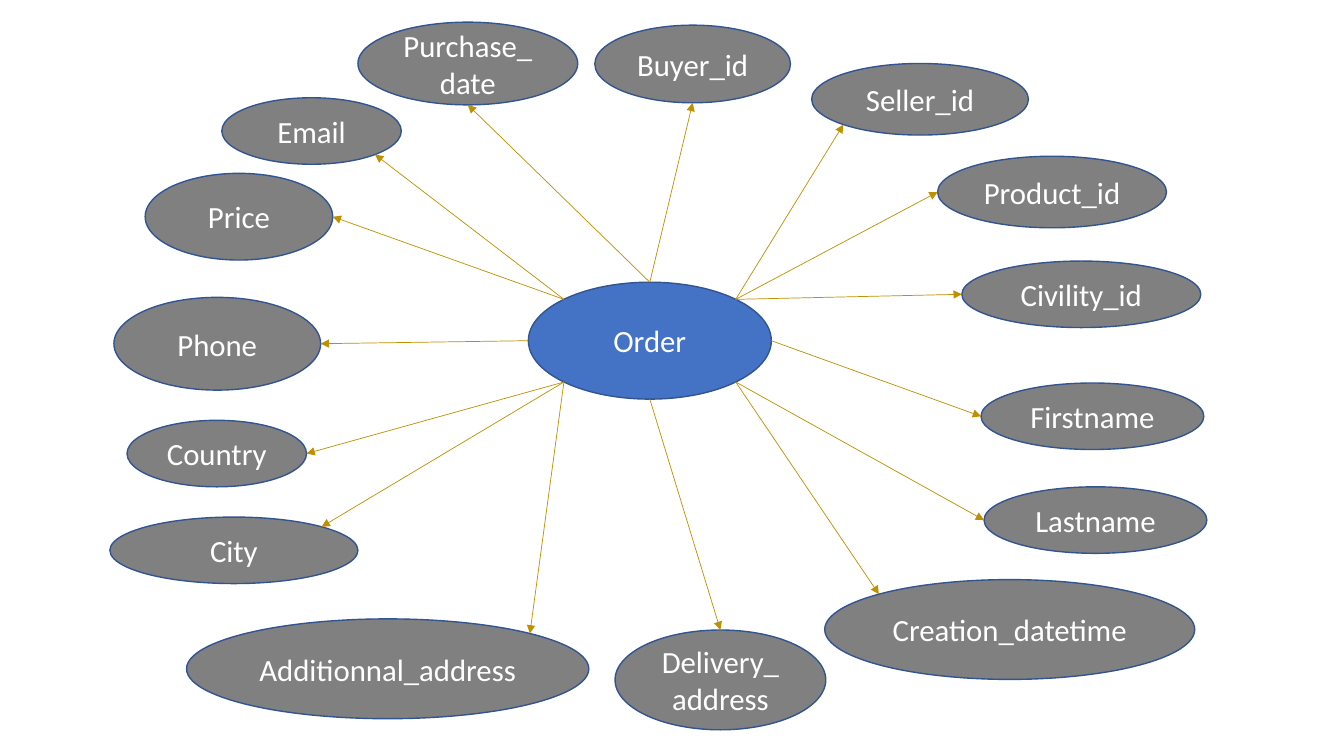
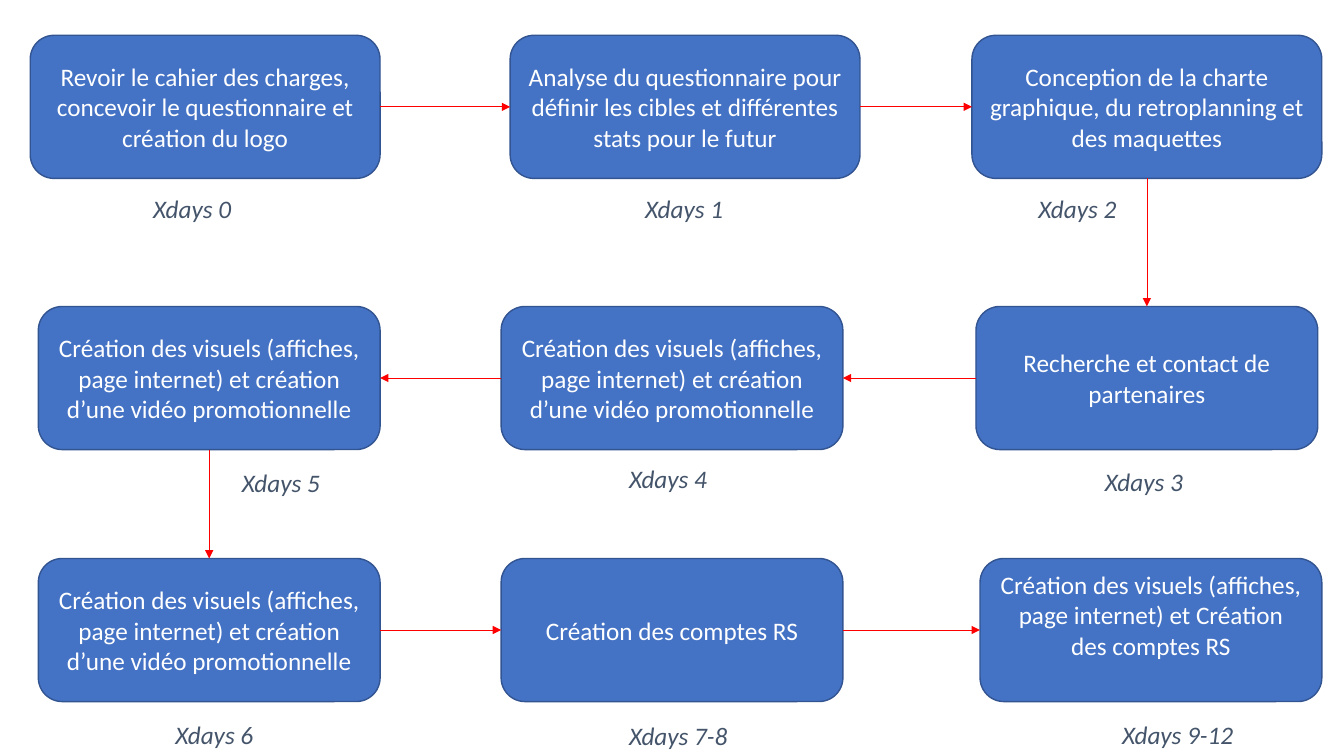
from math import sqrt

from pptx import Presentation
from pptx import util as u
from pptx.dml.color import RGBColor
from pptx.enum import shapes, text
from pptx.oxml import ns
from pptx.oxml.xmlchemy import OxmlElement

# Shared look; 100 px make one inch
PX = 9144
BLUE, GREY, OUTLINE, WHITE = "4472C4", "808080", "325491", "FFFFFF"
GOLD, RED = "BF9000", "FF0000"
NODE_FONT = {"name": "Calibri", "size": u.Pt(22), "color": WHITE}
STEP_FONT = {"name": "Calibri", "size": u.Pt(18), "color": WHITE}
LABEL_FONT = {"name": "Calibri", "size": u.Pt(18), "color": "44546A", "italic": True}

# Slide 1: centre, then attributes: name, box, side left on the centre, side reached
ORDER = ("Order", (524, 280, 241, 116))
ATTRIBUTES = [
    ("Purchase_date", (355, 22, 218, 82), "N", "S"),
    ("Buyer_id", (590, 25, 194, 77), "N", "S"),
    ("Seller_id", (805, 63, 215, 71), "NE", "SW"),
    ("Product_id", (930, 155, 227, 71), "NE", "W"),
    ("Civility_id", (954, 259, 237, 66), "NE", "W"),
    ("Firstname", (973, 380, 221, 66), "E", "W"),
    ("Lastname", (976, 483, 221, 66), "SE", "W"),
    ("Creation_datetime", (818, 575, 367, 99), "SE", "NW"),
    ("Delivery_address", (610, 625, 209, 99), "S", "N"),
    ("Additionnal_address", (185, 614, 399, 99), "SW", "NE"),
    ("City", (109, 513, 246, 66), "SW", "NE"),
    ("Country", (126, 417, 178, 66), "SW", "E"),
    ("Phone", (113, 295, 205, 92), "W", "E"),
    ("Price", (144, 172, 186, 86), "NW", "E"),
    ("Email", (220, 97, 178, 66), "NW", "SE"),
]
OUTLINES = {"Price": "2F5597"}

# Slide 2: rows of (top, step width, steps in reading order of the flow)
# Each step: left, text, label, label left, label top
STEP_HEIGHT = 142
LABEL_SIZE = (132, 40)
VISUALS = ("Création des visuels (affiches, page internet) et création "
           "d’une vidéo promotionnelle")
ROWS = [
    (35, 347, [
        (30, "Revoir le cahier des charges, concevoir le questionnaire et création du logo",
         "Xdays 0", 142, 187),
        (506, "Analyse du questionnaire pour définir les cibles et différentes "
              "stats pour le futur", "Xdays 1", 630, 187),
        (964, "Conception de la charte graphique, du retroplanning et des maquettes",
         "Xdays 2", 1020, 187)]),
    (304, 339, [
        (968, "Recherche et contact de partenaires", "Xdays 3", 1086, 458),
        (497, VISUALS, "Xdays 4", 614, 455),
        (38, VISUALS, "Xdays 5", 230, 459)]),
    (554, 339, [
        (38, VISUALS, "Xdays 6", 164, 709),
        (497, "Création des comptes RS", "Xdays 7-8", 614, 710),
        (972, "Création des visuels (affiches, page internet) et Création\vdes comptes RS",
         "Xdays 9-12", 1103, 709)]),
]
LAST_STEP_BOTTOM_MARGIN = 35
TOP, LEFT, BOTTOM, RIGHT = range(4)


def rgb(value):
    return RGBColor.from_string(value)


def emu(lengths):
    return [u.Emu(round(v * PX)) for v in lengths]


def write(shape, words, style, align):
    tf = shape.text_frame
    tf.word_wrap = True
    p = tf.paragraphs[0]
    p.text = words
    p.alignment = align
    for r in p.runs:
        for key, value in style.items():
            if key == "color":
                r.font.color.rgb = rgb(value)
            else:
                setattr(r.font, key, value)


def add_box(s, kind, box, words, fill, style, outline=OUTLINE):
    sp = s.shapes.add_shape(kind, *emu(box))
    sp.shadow.inherit = False
    sp.fill.solid()
    sp.fill.fore_color.rgb = rgb(fill)
    sp.line.color.rgb = rgb(outline)
    sp.line.width = u.Pt(1)
    sp.text_frame.vertical_anchor = text.MSO_ANCHOR.MIDDLE
    write(sp, words, style, text.PP_ALIGN.CENTER)
    return sp


def add_label(s, box, words):
    sp = s.shapes.add_textbox(*emu(box))
    write(sp, words, LABEL_FONT, text.PP_ALIGN.LEFT)
    sp.text_frame.auto_size = text.MSO_AUTO_SIZE.SHAPE_TO_FIT_TEXT


def add_arrow(s, start, end, color):
    c = s.shapes.add_connector(shapes.MSO_CONNECTOR.STRAIGHT, *emu(start + end))
    c.line.color.rgb = rgb(color)
    c.line.width = u.Pt(0.5)
    # Arrowhead on, theme shadow off
    sp_pr = c._element.spPr
    head = OxmlElement("a:tailEnd")
    head.set("type", "triangle")
    sp_pr.find(ns.qn("a:ln")).append(head)
    sp_pr.append(OxmlElement("a:effectLst"))
    return c


def ellipse_point(box, side):
    """Point of an ellipse in a compass direction."""
    x, y, w, h = box
    dx = ("E" in side) - ("W" in side)
    dy = ("S" in side) - ("N" in side)
    reach = sqrt(dx * dx + dy * dy)
    return x + w / 2 * (1 + dx / reach), y + h / 2 * (1 + dy / reach)


def build_order_map(s):
    oval = shapes.MSO_SHAPE.OVAL
    name, centre = ORDER
    add_box(s, oval, centre, name, BLUE, NODE_FONT)
    for name, box, leave, reach in ATTRIBUTES:
        add_box(s, oval, box, name, GREY, NODE_FONT, OUTLINES.get(name, OUTLINE))
        add_arrow(s, ellipse_point(centre, leave), ellipse_point(box, reach), GOLD)


def build_schedule(s):
    steps = []
    for top, width, row in ROWS:
        for left, words, label, label_left, label_top in row:
            steps.append(add_box(s, shapes.MSO_SHAPE.ROUNDED_RECTANGLE,
                                 (left, top, width, STEP_HEIGHT), words, BLUE, STEP_FONT))
            add_label(s, (label_left, label_top, *LABEL_SIZE), label)
    steps[-1].text_frame.margin_bottom = u.Emu(LAST_STEP_BOTTOM_MARGIN * PX)

    # Arrows follow the flow: along a row, then down to the next
    for a, b in zip(steps, steps[1:]):
        if a.top != b.top:
            leave, reach = BOTTOM, TOP
        elif a.left < b.left:
            leave, reach = RIGHT, LEFT
        else:
            leave, reach = LEFT, RIGHT
        c = add_arrow(s, (0, 0), (0, 0), RED)
        c.begin_connect(a, leave)
        c.end_connect(b, reach)


def main():
    prs = Presentation()
    prs.slide_width, prs.slide_height = emu((1333, 750))
    for build in (build_order_map, build_schedule):
        build(prs.slides.add_slide(prs.slide_layouts[6]))
    prs.save("out.pptx")


if __name__ == "__main__":
    main()
